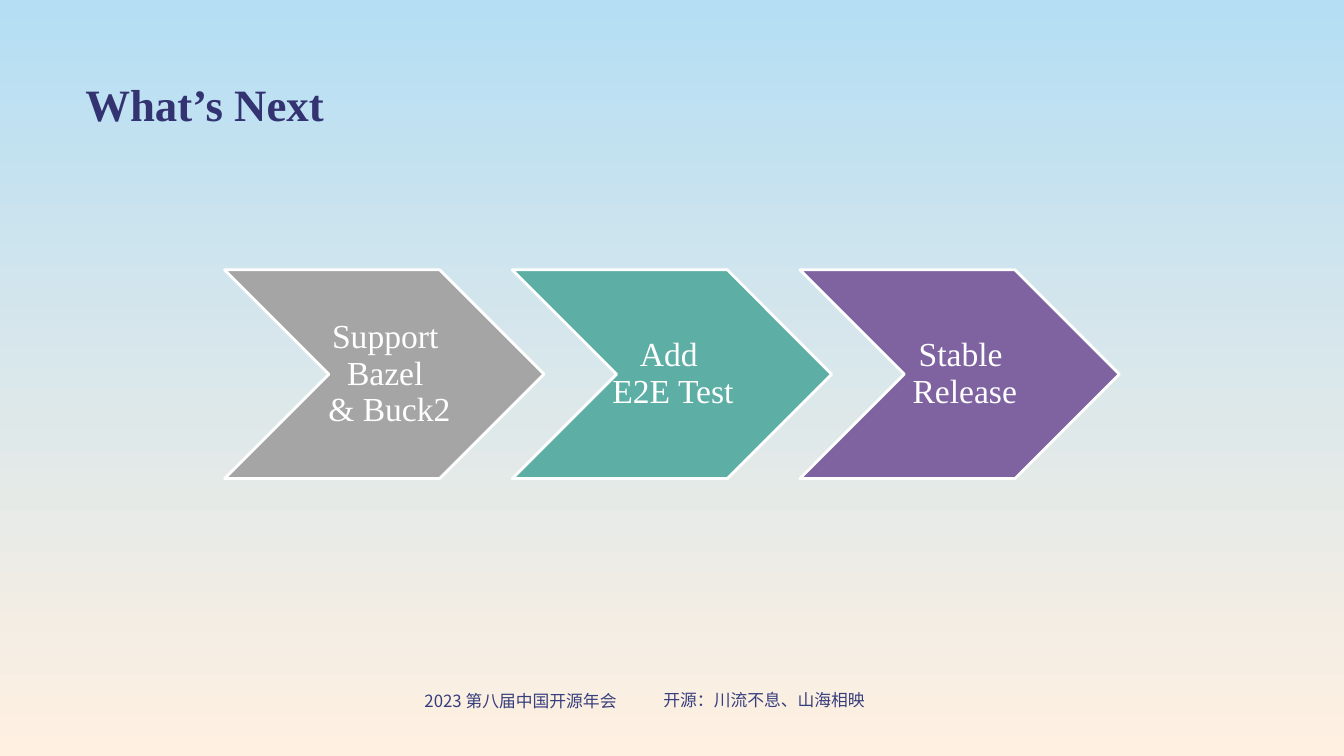
from lxml import etree
from pptx import Presentation, util as u
from pptx.dml.color import RGBColor
from pptx.enum import shapes, text
from pptx.oxml import ns

WHITE = RGBColor(0xFF, 0xFF, 0xFF)
GREY = RGBColor(0xA5, 0xA5, 0xA5)
TEAL = RGBColor(0x5D, 0xAE, 0xA5)
PURPLE = RGBColor(0x7F, 0x63, 0xA1)
NAVY = RGBColor(0x33, 0x33, 0x72)
FOOTER_BLUE = RGBColor(0x36, 0x3E, 0x7D)
SKY = RGBColor(0xB5, 0xDE, 0xF4)
SAND = RGBColor(0xFF, 0xF0, 0xE1)

SERIF = "Times New Roman"
SANS = "Noto Sans CJK SC"
TIGHT = (0.03, 0.03, 0.03, 0.03)
LABEL_INSETS = (0.08, 0.03, 0.03, 0.03)
FOOTER_INSETS = (0.25, 0.13, 0.25, 0.13)


def apply(target, values):
    for name, value in values.items():
        setattr(target, name, value)


class SlideBuilder:
    title = {"size": u.Pt(32), "name": SERIF, "bold": True}
    label = {"size": u.Pt(24), "name": SERIF}
    footer = {"size": u.Pt(12), "name": SANS}

    def __init__(self, presentation):
        self.slide = presentation.slides.add_slide(presentation.slide_layouts[6])

    def background(self, *colors):
        fill = self.slide.background.fill
        fill.gradient()
        fill.gradient_angle = 270
        for stop, color in zip(fill.gradient_stops, colors):
            stop.color.rgb = color

    def words(self, box, lines, font, color, insets, paragraph_format=None, middle=False):
        frame = self.slide.shapes.add_textbox(*map(u.Cm, box)).text_frame
        sides = ("margin_left", "margin_top", "margin_right", "margin_bottom")
        apply(frame, dict(zip(sides, map(u.Cm, insets))))
        frame.word_wrap = True
        if middle:
            frame.vertical_anchor = text.MSO_ANCHOR.MIDDLE
        for index, line in enumerate(lines):
            paragraph = frame.add_paragraph() if index else frame.paragraphs[0]
            apply(paragraph, paragraph_format or {})
            run = paragraph.add_run()
            run.text = line
            apply(run.font, font)
            run.font.color.rgb = color
            east_asian = etree.SubElement(run._r.get_or_add_rPr(), ns.qn("a:ea"))
            east_asian.set("typeface", font["name"])

    def chevron(self, box, color):
        arrow = self.slide.shapes.add_shape(shapes.MSO_SHAPE.CHEVRON, *map(u.Cm, box))
        arrow.adjustments[0] = 0.5
        arrow.shadow.inherit = False
        arrow.fill.solid()
        arrow.fill.fore_color.rgb = color
        arrow.line.color.rgb = WHITE
        arrow.line.width = u.Pt(2)

    def step(self, left, top, lines, color):
        width, height = 8.05, 5.26
        label_width = 0.6 * width
        self.chevron((left, top, width, height), color)
        self.words((left + 0.2 * width, top, label_width, height), lines, self.label, WHITE,
                   LABEL_INSETS,
                   {"alignment": text.PP_ALIGN.CENTER, "line_spacing": 0.9}, middle=True)


def main():
    presentation = Presentation()
    apply(presentation, {"slide_width": u.Cm(33.87), "slide_height": u.Cm(19.05)})
    builder = SlideBuilder(presentation)
    builder.background(SKY, SAND)

    centered = {"alignment": text.PP_ALIGN.CENTER}
    for box, line in (
        ((9.63, 17.27, 6.98, 0.77), "2023 第八届中国开源年会"),
        ((16.2, 17.25, 6.12, 0.77), "开源：川流不息、山海相映"),
    ):
        builder.words(box, [line], builder.footer, FOOTER_BLUE, FOOTER_INSETS, centered)

    roadmap = (
        (("Support Bazel", " & Buck2"), GREY),
        (("Add ", "E2E Test"), TEAL),
        (("Stable", " Release"), PURPLE),
    )
    for index, (lines, color) in enumerate(roadmap):
        builder.step(5.66 + 7.25 * index, 6.8, lines, color)

    builder.words((2.12, 1.9, 8.43, 1.42), ["What’s Next"], builder.title, NAVY, TIGHT)
    presentation.save("out.pptx")


if __name__ == "__main__":
    main()
